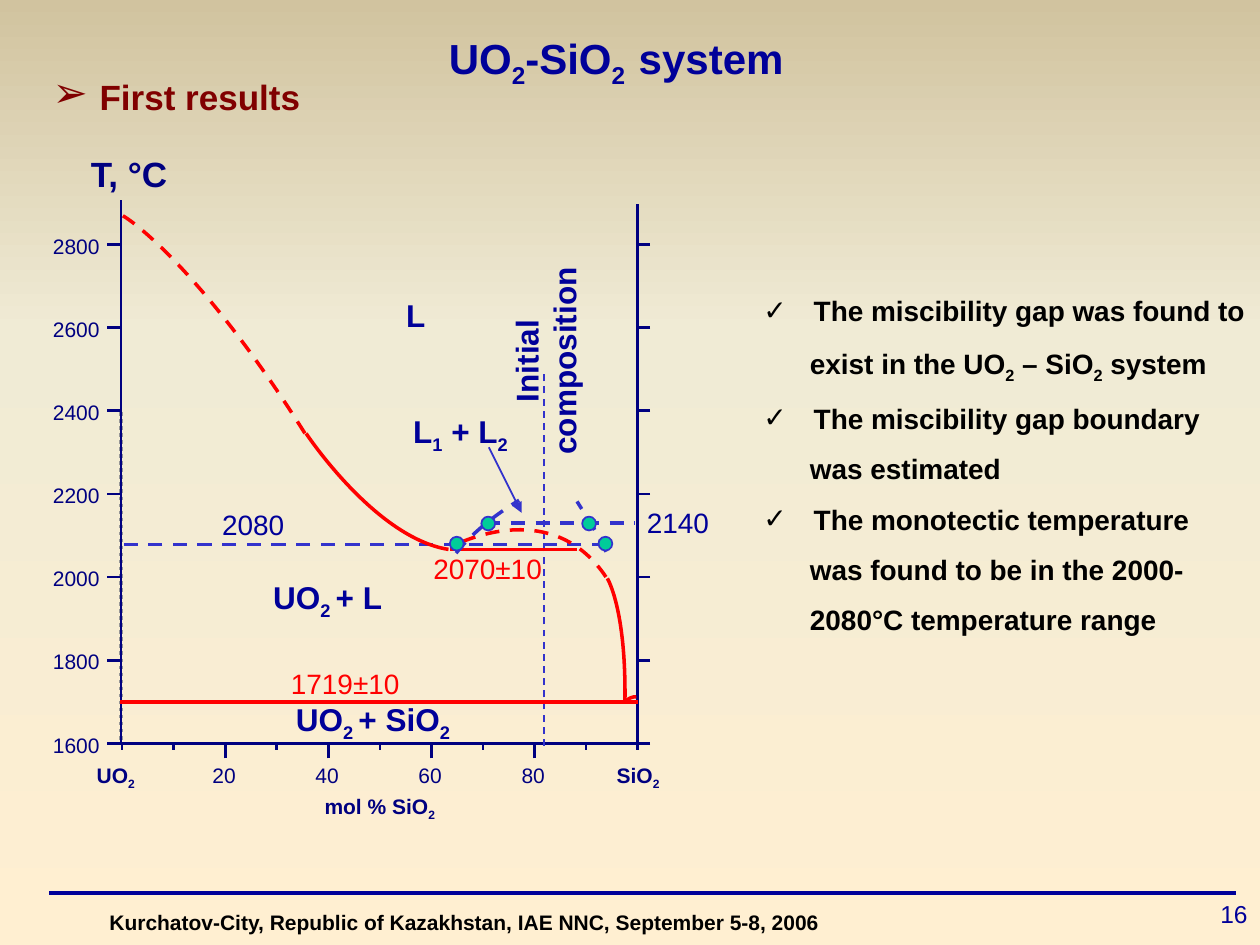
from copy import deepcopy

from lxml import etree
from pptx import Presentation
from pptx.dml.color import RGBColor
from pptx.enum import dml, shapes, text
from pptx.oxml.ns import qn
from pptx.util import Inches, Pt

NAVY = RGBColor(0x00, 0x00, 0x80)
BLUE = RGBColor(0x00, 0x00, 0x99)
VIOLET = RGBColor(0x33, 0x33, 0xCC)
RED = RGBColor(0xFF, 0x00, 0x00)
MAROON = RGBColor(0x80, 0x00, 0x00)
GREEN = RGBColor(0x00, 0xCC, 0x99)
GREY = RGBColor(0x96, 0x96, 0x96)
BLACK = RGBColor(0x00, 0x00, 0x00)
BACKGROUND = [(0, RGBColor(0xD1, 0xC3, 0x9F)), (0.35, RGBColor(0xF0, 0xEB, 0xD5)),
              (1, RGBColor(0xFF, 0xEF, 0xD1))]
LEFT, CENTER, RIGHT = text.PP_ALIGN.LEFT, text.PP_ALIGN.CENTER, text.PP_ALIGN.RIGHT
TOP, MIDDLE = text.MSO_ANCHOR.TOP, text.MSO_ANCHOR.MIDDLE
DASH, DOT = dml.MSO_LINE.DASH, dml.MSO_LINE.ROUND_DOT

deck = Presentation()
deck.slide_width, deck.slide_height = Inches(10), Inches(7.5)
page = deck.slides.add_slide(deck.slide_layouts[6])


def add_text(paragraphs, left, top, width, height, size, color, bold=False,
             align=CENTER, anchor=TOP, margins=(0, 0), wrap=True):
    """Text between underscores becomes a subscript."""
    box = page.shapes.add_textbox(*map(Inches, (left, top, width, height)))
    frame = box.text_frame
    frame.word_wrap, frame.vertical_anchor = wrap, anchor
    frame.margin_left = frame.margin_right = Inches(margins[0])
    frame.margin_top = frame.margin_bottom = Inches(margins[1])
    for number, content in enumerate(paragraphs):
        para = frame.add_paragraph() if number else frame.paragraphs[0]
        para.alignment = align
        for index, part in enumerate(content.split("_")):
            if not part:
                continue
            span = para.add_run()
            span.text = part
            span.font.name, span.font.size, span.font.bold = "Arial", Pt(size), bold
            span.font.color.rgb = color
            if index % 2:
                span.font._element.set("baseline", "-25000")
    return box


def add_line(x1, y1, x2, y2, color=NAVY, width=1.5, dash=None):
    line = page.shapes.add_connector(shapes.MSO_CONNECTOR.STRAIGHT,
                                     *map(Inches, (x1, y1, x2, y2)))
    line.line.color.rgb, line.line.width = color, Pt(width)
    if dash:
        line.line.dash_style = dash
    etree.SubElement(line._element.spPr, qn("a:effectLst"))
    return line


# Background gradient, top to bottom
fill = page.background.fill
fill.gradient()
fill.gradient_angle = 270
stops = page.element.find(".//" + qn("a:gsLst"))
stops.append(deepcopy(stops[0]))
for stop, (position, color) in zip(fill.gradient_stops, BACKGROUND):
    stop.position, stop.color.rgb = position, color

# Footer and title
add_line(0.39, 7.09, 9.81, 7.09, BLUE, 2.25)
add_text(["Kurchatov-City, Republic of Kazakhstan, IAE NNC, September 5-8, 2006"],
         0.77, 7.17, 6.85, 0.3, 12, BLACK, True, LEFT, margins=(0.1, 0.05))
add_text(["16"], 7.92, 7, 2.08, 0.5, 14, BLUE, False, RIGHT, MIDDLE, (0.1, 0.05), False)
add_text(["UO_2_-SiO_2  _system"], 0.64, 0.21, 8.5, 0.55, 24, BLUE, True,
         anchor=MIDDLE, margins=(0.1, 0.05))

# Diagram axes
X0, X1, Y0 = 0.97, 5.06, 5.9
add_line(0.96, 3.27, 0.96, Y0, GREY, 0, DOT)
add_line(0.96, 1.59, 0.96, Y0)
add_line(X1, 1.62, X1, Y0)
add_line(X0, Y0, X1, Y0)

# Temperature ticks every 200 degrees, on both sides
for step in range(7):
    y = Y0 - 0.66 * step
    add_line(0.96, y, 0.85, y)
    add_line(5.16, y, 5.05, y)
    add_text([str(1600 + 200 * step)], 0.42, y - 0.09, 0.45 if step < 3 else 0.4, 0.18,
             12, NAVY, align=LEFT)

# Composition ticks every 10 mol %, longer and labelled every 20
for percent in range(0, 101, 10):
    x = X0 + (X1 - X0) * percent / 100
    labelled = percent in (20, 40, 60, 80)
    add_line(x, Y0 + (0.12 if labelled else 0.05), x, Y0)
    if labelled:
        add_text([str(percent)], x - 0.17, 6.05, 0.32, 0.18, 12, NAVY)

# Phase boundaries and measured levels
for x1, y1, x2, y2, color, width, dash in [
    (4.81, 4.32, 0.94, 4.32, VIOLET, 2, DASH),
    (3.86, 4.15, 5.04, 4.15, VIOLET, 2, DASH),
    (4.32, 5.92, 4.32, 2.95, VIOLET, 1, DASH),
    (5.06, 5.57, 0.95, 5.57, RED, 2, None),
    (4.58, 4.36, 3.57, 4.36, RED, 2, None),
]:
    add_line(x1, y1, x2, y2, color, width, dash)

# Curved boundaries: four Bezier control points each
for controls, color, dash in [
    ([(4.96, 5.57), (4.97, 4.83), (4.82, 4.59), (4.82, 4.59)], RED, None),
    ([(4.96, 5.57), (4.99, 5.54), (5.02, 5.53), (5.05, 5.53)], RED, None),
    ([(3.56, 4.36), (2.98, 4.27), (2.43, 3.44), (2.43, 3.44)], RED, None),
    ([(2.42, 3.44), (1.64, 2.2), (1.08, 1.77), (0.97, 1.71)], RED, DASH),
    ([(4.81, 4.58), (4.43, 4.01), (3.8, 4.23), (3.58, 4.34)], RED, DASH),
    ([(3.62, 4.39), (3.78, 4.19), (3.99, 4.05), (4.12, 3.97)], VIOLET, DASH),
    ([(4.81, 4.38), (4.74, 4.22), (4.66, 4.11), (4.58, 3.98)], VIOLET, DASH),
]:
    points = [(Inches(x), Inches(y)) for x, y in controls]
    builder = page.shapes.build_freeform(*points[0])
    builder.add_line_segments(points[1:], close=False)
    curve = builder.convert_to_shape()
    # Turn the three straight segments into one cubic segment
    segments = list(curve._element.iter(qn("a:lnTo")))
    outline = segments[0].getparent()
    cubic = etree.SubElement(outline, qn("a:cubicBezTo"))
    for segment in segments:
        cubic.append(segment[0])
        outline.remove(segment)
    curve.fill.background()
    curve.line.color.rgb, curve.line.width = color, Pt(2)
    if dash:
        curve.line.dash_style = dash
    curve.shadow.inherit = False

# Arrow into the miscibility gap
arrow = add_line(3.88, 3.55, 4.14, 4.07, VIOLET, 1)
etree.SubElement(arrow.line._get_or_add_ln(), qn("a:tailEnd"), type="triangle")

# Measured points
for left, top in [(3.82, 4.1), (4.62, 4.1), (4.75, 4.26), (3.57, 4.26)]:
    dot = page.shapes.add_shape(shapes.MSO_SHAPE.OVAL,
                                *map(Inches, (left, top, 0.11, 0.11)))
    dot.fill.solid()
    dot.fill.fore_color.rgb = GREEN
    dot.line.color.rgb, dot.line.width = VIOLET, Pt(1)
    dot.shadow.inherit = False

# Diagram labels
for label, left, top, width, height, size, color, bold in [
    ("T, °C", 0.62, 1.21, 0.81, 0.31, 20, NAVY, True),
    ("UO_2_", 0.65, 6.05, 0.54, 0.24, 12, NAVY, True),
    ("SiO_2_", 4.86, 6.05, 0.41, 0.29, 12, NAVY, True),
    ("mol % SiO_2_", 2.36, 6.3, 1.31, 0.33, 12, NAVY, True),
    ("L", 2.41, 2.35, 1.78, 0.26, 18, BLUE, True),
    ("L_1_ + L_2_", 3.14, 3.27, 1.03, 0.31, 18, BLUE, True),
    ("UO_2 _+ L", 1.71, 4.59, 1.78, 0.26, 18, BLUE, True),
    ("UO_2 _+ SiO_2_", 2.07, 5.56, 1.78, 0.26, 18, BLUE, True),
    ("2080", 1.48, 4.03, 1.06, 0.26, 16, BLUE, False),
    ("2140", 4.85, 4.01, 1.06, 0.26, 16, BLUE, False),
    ("1719±10", 2.21, 5.29, 1.06, 0.26, 16, RED, False),
    ("2070±10", 3.34, 4.38, 1.06, 0.26, 16, RED, False),
]:
    add_text([label], left, top, width, height, size, color, bold)
add_text(["Initial composition"], 3.28, 2.71, 1.8, 0.31, 18, BLUE, True).rotation = 270

# Heading, led by a larger space, and findings
heading = add_text([" "], 0.32, 0.49, 2.22, 0.5, 24, MAROON, True, LEFT,
                   MIDDLE, (0.1, 0.05), False)
span = heading.text_frame.paragraphs[0].add_run()
span.text = "First results"
span.font.name, span.font.size, span.font.bold = "Arial", Pt(20), True
span.font.color.rgb = MAROON

findings = add_text(
    ["\tThe miscibility gap was found to exist in the UO_2_ – SiO_2_ system",
     "\tThe miscibility gap boundary was estimated",
     "\tThe monotectic temperature was found to be in the 2000-2080°C temperature range"],
    5.77, 2.17, 4.23, 2.91, 16, BLACK, True, LEFT, MIDDLE, (0.1, 0.05))

# Bullets, with hanging indents for the findings
for box, mark in [(heading, "➢"), (findings, "✓")]:
    box.text_frame.auto_size = text.MSO_AUTO_SIZE.SHAPE_TO_FIT_TEXT
    for para in box.text_frame.paragraphs:
        if box is findings:
            para.line_spacing = 1.5
        properties = para._p.get_or_add_pPr()
        etree.SubElement(properties, qn("a:buFont"), typeface="Arial")
        etree.SubElement(properties, qn("a:buChar"), char=mark)
        if box is findings:
            properties.set("marL", str(Inches(0.56)))
            properties.set("indent", str(Inches(-0.37)))
            tabs = etree.SubElement(properties, qn("a:tabLst"))
            etree.SubElement(tabs, qn("a:tab"), pos=str(Inches(0.59)), algn="l")

deck.save("out.pptx")
